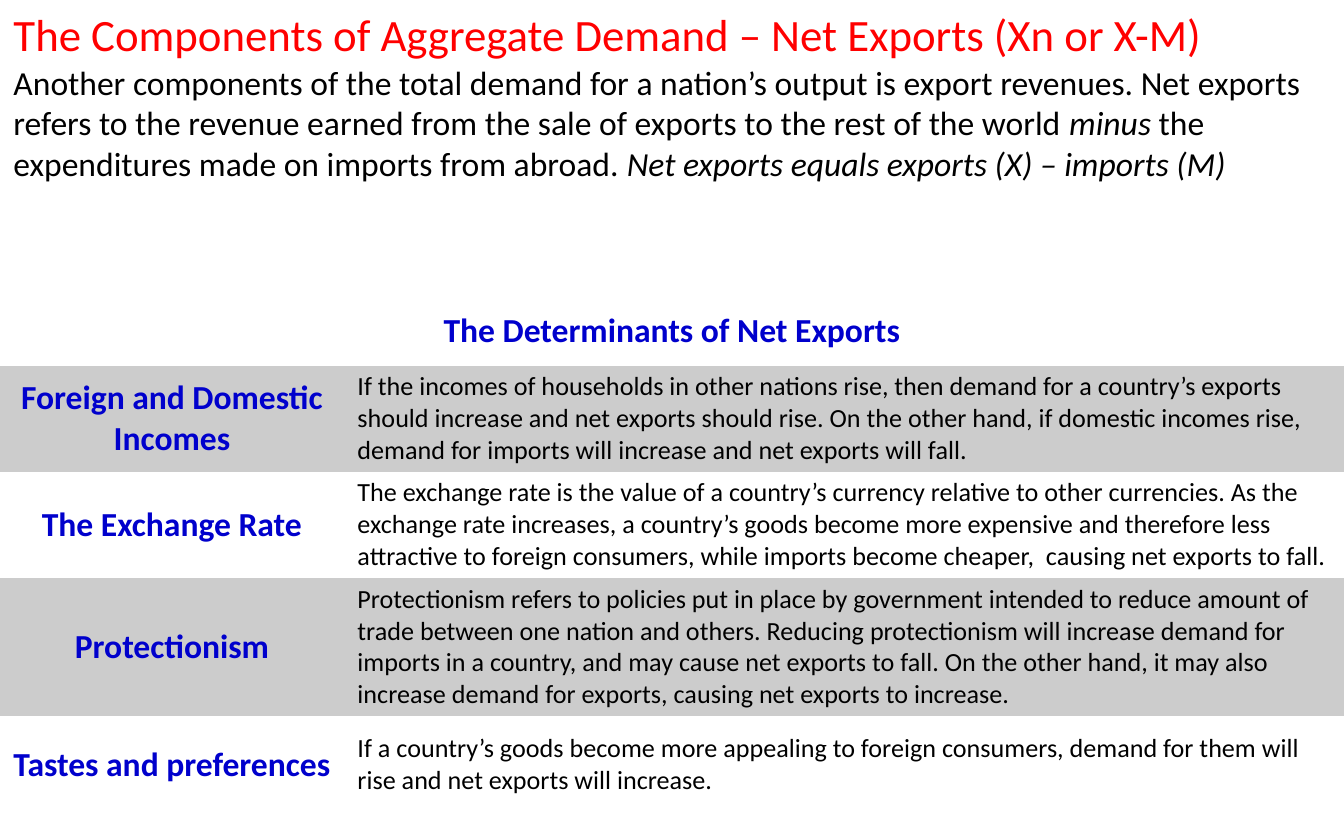
"""Build the slide on net exports and their determinants."""
from pptx import Presentation
from pptx.dml.color import RGBColor
from pptx.enum.text import MSO_ANCHOR, MSO_AUTO_SIZE, PP_ALIGN
from pptx.oxml.ns import qn
from pptx.util import Inches, Pt

TOP, MIDDLE = MSO_ANCHOR.TOP, MSO_ANCHOR.MIDDLE
LEFT, CENTER = PP_ALIGN.LEFT, PP_ALIGN.CENTER
FIXED = MSO_AUTO_SIZE.NONE
PLAIN = "{2D5ABB26-0587-4C30-8999-92F81FD0307C}"
FONT = "Calibri"
COLORS = {"title": "FF0000", "text": "000000", "head": "0000CC", "band": "CCCCCC"}

WIDTH, HEIGHT = 10, 6.25
TITLE = [("The Components of Aggregate Demand – Net Exports (Xn or X-M)", False)]
INTRO = [
    ("Another components of the total demand for a nation’s output is export "
     "revenues. Net exports refers to the revenue earned from the sale of exports "
     "to the rest of the world ", False),
    ("minus", True),
    (" the expenditures made on imports from abroad. ", False),
    ("Net exports equals exports (X) – imports (M)", True),
]
HEADING = "The Determinants of Net Exports"
FACTORS = [
    ("Foreign and Domestic Incomes",
     "If the incomes of households in other nations rise, then demand for a "
     "country’s exports should increase and net exports should rise. On the other "
     "hand, if domestic incomes rise, demand for imports will increase and net "
     "exports will fall."),
    ("The Exchange Rate",
     "The exchange rate is the value of a country’s currency relative to other "
     "currencies. As the exchange rate increases, a country’s goods become more "
     "expensive and therefore less attractive to foreign consumers, while imports "
     "become cheaper,  causing net exports to fall."),
    ("Protectionism",
     "Protectionism refers to policies put in place by government intended to "
     "reduce amount of trade between one nation and others. Reducing protectionism "
     "will increase demand for imports in a country, and may cause net exports to "
     "fall. On the other hand, it may also increase demand for exports, causing "
     "net exports to increase."),
    ("Tastes and preferences",
     "If a country’s goods become more appealing to foreign consumers, demand for "
     "them will rise and net exports will increase."),
]
COLS = [2.56, 7.44]
ROWS = [0.51, 0.78, 0.78, 1.03, 0.72]
TITLE_H, INTRO_H, TABLE_Y = 0.46, 0.95, 2.21


def write(para, runs, size, color, align=LEFT, bold=False):
    para.alignment = align
    para.space_before = para.space_after = Pt(0)
    para.line_spacing = 1.0
    for text, italic in runs:
        run = para.add_run()
        run.text = text
        font = run.font
        font.name, font.size = FONT, Pt(size)
        font.bold, font.italic = bold, italic
        font.color.rgb = RGBColor.from_string(COLORS[color])


def place(holder, top, height, inset, runs, size, color):
    holder.left, holder.top = 0, Inches(top)
    holder.width, holder.height = Inches(WIDTH), Inches(height)
    frame = holder.text_frame
    frame.word_wrap, frame.auto_size = True, FIXED
    frame.vertical_anchor = TOP
    frame.margin_left = frame.margin_right = Inches(0.1)
    frame.margin_top, frame.margin_bottom = Inches(inset), 0
    para = frame.paragraphs[0]
    write(para, runs, size, color)
    props = para._p.get_or_add_pPr()
    props.set("marL", "0")
    props.set("indent", "0")
    props.append(props.makeelement(qn("a:buNone"), {}))


def fill_cell(cell, text, head, band):
    cell.vertical_anchor = MIDDLE
    cell.margin_left = cell.margin_right = Inches(0.1)
    cell.margin_top = cell.margin_bottom = Inches(0.04)
    if band:
        cell.fill.solid()
        cell.fill.fore_color.rgb = RGBColor.from_string(COLORS["band"])
    else:
        cell.fill.background()
    style = (18, "head", CENTER, True) if head else (14, "text")
    write(cell.text_frame.paragraphs[0], [(text, False)], *style)


def add_grid(slide):
    frame = slide.shapes.add_table(len(ROWS), len(COLS), 0, Inches(TABLE_Y),
                                   Inches(sum(COLS)), Inches(sum(ROWS)))
    table = frame.table
    table.first_row = table.horz_banding = False
    table._tbl.tblPr.find(qn("a:tableStyleId")).text = PLAIN
    for col, width in zip(table.columns, COLS):
        col.width = Inches(width)
    for row, height in zip(table.rows, ROWS):
        row.height = Inches(height)
    table.cell(0, 0).merge(table.cell(0, 1))
    fill_cell(table.cell(0, 0), HEADING, True, False)
    for row, pair in enumerate(FACTORS, 1):
        for col, text in enumerate(pair):
            fill_cell(table.cell(row, col), text, col == 0, row % 2 == 1)


def main():
    deck = Presentation()
    deck.slide_width, deck.slide_height = Inches(WIDTH), Inches(HEIGHT)
    slide = deck.slides.add_slide(deck.slide_layouts[1])
    title, body = slide.placeholders
    place(title, 0, TITLE_H, 0.05, TITLE, 24, "title")
    place(body, TITLE_H, INTRO_H, 0, INTRO, 18, "text")
    add_grid(slide)
    deck.save("out.pptx")


if __name__ == "__main__":
    main()
